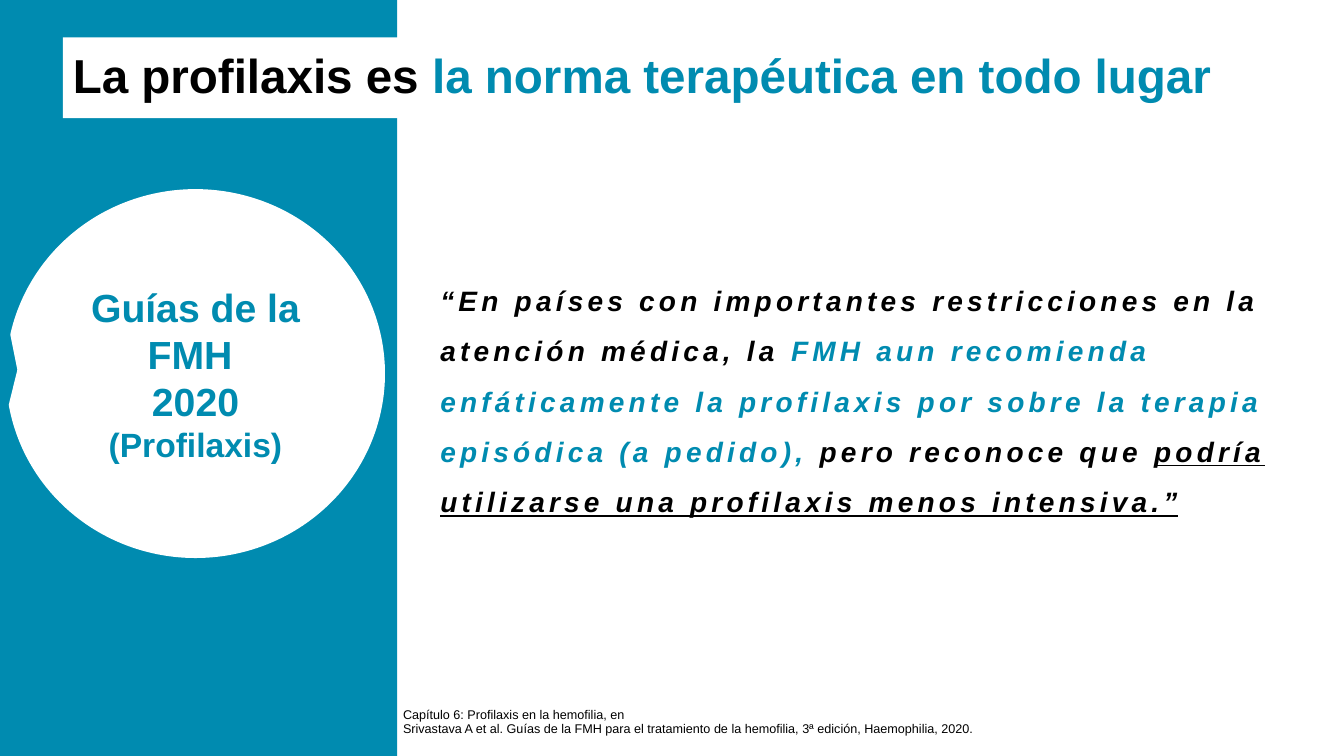
from pptx import Presentation
from pptx.dml.color import RGBColor
from pptx.enum.shapes import MSO_SHAPE
from pptx.enum.text import MSO_ANCHOR, PP_ALIGN
from pptx.util import Pt

RECTANGLE = MSO_SHAPE.RECTANGLE
CALLOUT = MSO_SHAPE.OVAL_CALLOUT
LEFT, CENTER = PP_ALIGN.LEFT, PP_ALIGN.CENTER
MIDDLE, BOTTOM = MSO_ANCHOR.MIDDLE, MSO_ANCHOR.BOTTOM
TEAL = RGBColor(0x00, 0x8B, 0xB0)
BLACK = RGBColor(0x00, 0x00, 0x00)
WHITE = RGBColor(0xFF, 0xFF, 0xFF)
WIDTH, HEIGHT = 960, 540


class SlideBuilder:
    font_name = "Arial"

    def __init__(self, presentation):
        self.slide = presentation.slides.add_slide(presentation.slide_layouts[6])
        background = self.slide.background.fill
        background.solid()
        background.fore_color.rgb = WHITE

    def block(self, kind, left, top, width, height, color):
        shape = self.slide.shapes.add_shape(
            kind, Pt(left), Pt(top), Pt(width), Pt(height))
        shape.shadow.inherit = False
        shape.fill.solid()
        shape.fill.fore_color.rgb = color
        shape.line.fill.background()
        return shape

    def text_box(self, left, top, width, height):
        return self.slide.shapes.add_textbox(
            Pt(left), Pt(top), Pt(width), Pt(height))

    def add_text(self, shape, paragraphs, anchor=MIDDLE, align=LEFT,
                 line_spacing=1.0, bold=True, italic=False, tracking=0):
        frame = shape.text_frame
        frame.word_wrap = True
        frame.vertical_anchor = anchor
        for index, runs in enumerate(paragraphs):
            paragraph = frame.add_paragraph() if index else frame.paragraphs[0]
            paragraph.alignment = align
            paragraph.line_spacing = line_spacing
            for text, size, color, underline in runs:
                run = paragraph.add_run()
                run.text = text
                font = run.font
                font.name = self.font_name
                font.size = Pt(size)
                font.bold = bold
                font.italic = italic
                font.underline = underline
                font.color.rgb = color
                if tracking:
                    run._r.get_or_add_rPr().set("spc", str(tracking * 100))


def main():
    presentation = Presentation()
    presentation.slide_width = Pt(WIDTH)
    presentation.slide_height = Pt(HEIGHT)
    builder = SlideBuilder(presentation)

    builder.block(RECTANGLE, 0, 0, 283.7, HEIGHT, TEAL)

    quote = builder.block(RECTANGLE, 307.4, 94.3, 605.5, 372.2, WHITE)
    builder.add_text(quote, [[
        ("“En países con importantes restricciones en la atención médica, la ",
         20, BLACK, False),
        ("FMH aun recomienda enfáticamente la profilaxis por sobre la terapia "
         "episódica (a pedido), ", 20, TEAL, False),
        ("pero reconoce que ", 20, BLACK, False),
        ("podría utilizarse una profilaxis menos intensiva.”", 20, BLACK, True),
    ]], line_spacing=1.5, italic=True, tracking=3)

    title = builder.block(RECTANGLE, 44.9, 26.8, WIDTH - 44.9, 57.6, WHITE)
    builder.add_text(title, [[
        ("La profilaxis es ", 34, BLACK, False),
        ("la norma terapéutica en todo lugar", 34, TEAL, False),
    ]], line_spacing=0.9)

    callout = builder.block(CALLOUT, 4.3, 135.1, 270.7, 263.5, WHITE)
    callout.adjustments[0] = -0.47
    callout.adjustments[1] = -0.01
    builder.add_text(callout, [
        [("Guías de la FMH ", 28, TEAL, False)],
        [("2020", 28, TEAL, False)],
        [("(Profilaxis)", 24, TEAL, False)],
    ], align=CENTER)

    reference = builder.text_box(280.8, 499, 495.4, 26.6)
    reference.text_frame.margin_bottom = Pt(0)
    builder.add_text(reference, [
        [("Capítulo 6: Profilaxis en la hemofilia, en", 9, BLACK, False)],
        [("Srivastava A et al. Guías de la FMH para el tratamiento de la "
          "hemofilia, 3ª edición, Haemophilia, 2020.", 9, BLACK, False)],
    ], anchor=BOTTOM, line_spacing=0.9, bold=False)

    presentation.save("out.pptx")


if __name__ == "__main__":
    main()
